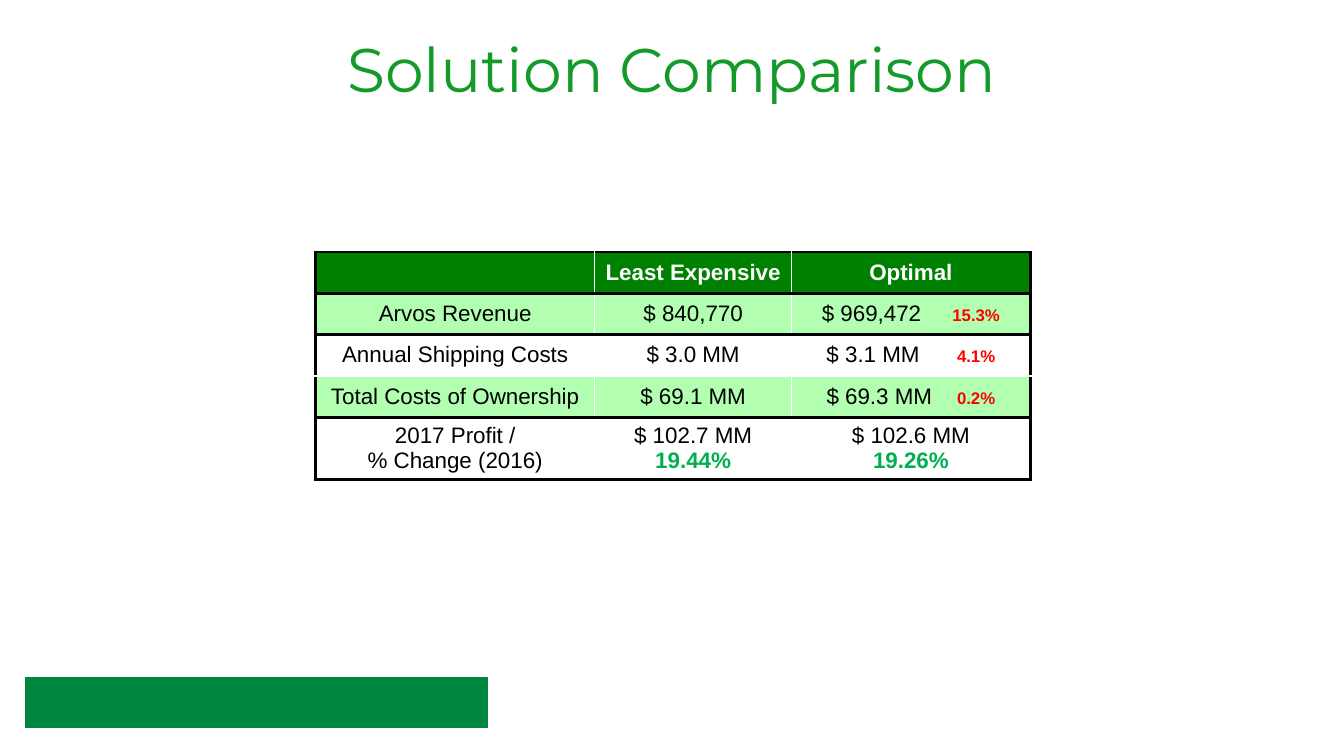
from lxml.etree import SubElement
from pptx import Presentation
from pptx.dml.color import RGBColor
from pptx.enum.shapes import MSO_SHAPE
from pptx.enum.text import MSO_ANCHOR, PP_ALIGN
from pptx.oxml.ns import qn
from pptx.util import Inches, Pt

BLACK, WHITE, RED = "000000", "FFFFFF", "FF0000"
HEADER_GREEN, BAND_GREEN, GAIN_GREEN = "008000", "B2FFB2", "00B050"
BLACK_EDGE, WHITE_EDGE = (BLACK, 2.25), (WHITE, 1)
SPACE_WIDTH = 4.45  # points, Arial 16


def color(hex_string):
    return RGBColor.from_string(hex_string)


def add_run(paragraph, text, size=16, font="Arial", fill=BLACK, bold=False, spacing=0):
    """Append a run; spacing is extra letter spacing in points."""
    run = paragraph.add_run()
    run.text = text
    run.font.size = Pt(size)
    run.font.name = font
    run.font.bold = bold
    run.font.color.rgb = color(fill)
    if spacing:
        run.font._element.set("spc", str(round(spacing * 100)))


def set_borders(cell, edges):
    """Draw the cell edges, given in the order left, right, top, bottom."""
    properties = cell._tc.get_or_add_tcPr()
    for index, (side, (hex_string, width)) in enumerate(zip("LRTB", edges)):
        line = SubElement(properties, qn(f"a:ln{side}"), w=str(Pt(width)))
        solid = SubElement(line, qn("a:solidFill"))
        SubElement(solid, qn("a:srgbClr"), val=hex_string)
        properties.insert(index, line)


class SlideBuilder:
    """Holds the fonts and the current slide."""

    title_font = "Montserrat"

    def __init__(self, slide):
        self.slide = slide

    def title(self, text, left, top, width, height):
        box = self.slide.shapes.add_textbox(*map(Inches, (left, top, width, height)))
        frame = box.text_frame
        frame.word_wrap = True
        frame.vertical_anchor = MSO_ANCHOR.MIDDLE
        paragraph = frame.paragraphs[0]
        paragraph.alignment = PP_ALIGN.CENTER
        add_run(paragraph, text, size=44, font=self.title_font, fill="139A29")

    def bar(self, hex_string, left, top, width, height):
        bar = self.slide.shapes.add_shape(
            MSO_SHAPE.RECTANGLE, *map(Inches, (left, top, width, height)))
        bar.shadow.inherit = False
        bar.fill.solid()
        bar.fill.fore_color.rgb = color(hex_string)
        bar.line.color.rgb = color(hex_string)
        bar.line.width = Pt(0.75)

    def table(self, rows, left, top, widths, heights, fills, rules):
        """Add a table; rules are the horizontal edges from top to bottom."""
        table = self.slide.shapes.add_table(
            len(rows), len(widths), Inches(left), Inches(top),
            Inches(sum(widths)), Inches(sum(heights))).table
        for column, width in zip(table.columns, widths):
            column.width = Inches(width)
        verticals = [BLACK_EDGE] + [WHITE_EDGE] * (len(widths) - 1) + [BLACK_EDGE]
        for r, row in enumerate(rows):
            table.rows[r].height = Inches(heights[r])
            for c, lines in enumerate(row):
                cell = table.cell(r, c)
                cell.fill.solid()
                cell.fill.fore_color.rgb = color(fills[r])
                cell.vertical_anchor = MSO_ANCHOR.MIDDLE
                set_borders(cell, (*verticals[c:c + 2], *rules[r:r + 2]))
                self.fill_cell(cell, lines)

    def fill_cell(self, cell, lines):
        """Write each line, a list of (text, format) runs, as a centred paragraph."""
        frame = cell.text_frame
        for index, runs in enumerate(lines):
            paragraph = frame.add_paragraph() if index else frame.paragraphs[0]
            paragraph.alignment = PP_ALIGN.CENTER
            for text, style in runs:
                add_run(paragraph, text, **style)


def heading(text):
    return [[(text, {"fill": WHITE, "bold": True})]]


def plain(*lines):
    return [[(line, {})] for line in lines]


def with_change(amount, change, gap):
    """Amount and small red change, gap space widths apart."""
    return [[(amount, {}), (" ", {"spacing": (gap - 1) * SPACE_WIDTH}),
             (change, {"size": 12, "fill": RED, "bold": True})]]


def with_growth(amount, growth):
    return [[(amount, {})], [(growth, {"fill": GAIN_GREEN, "bold": True})]]


def main():
    presentation = Presentation()
    presentation.slide_width = Inches(13.33)
    presentation.slide_height = Inches(7.5)
    builder = SlideBuilder(presentation.slides.add_slide(presentation.slide_layouts[6]))

    rows = [
        [[], heading("Least Expensive"), heading("Optimal")],
        [plain("Arvos Revenue"), plain("$ 840,770"),
         with_change("$ 969,472", "15.3%", 5)],
        [plain("Annual Shipping Costs"), plain("$ 3.0 MM"),
         with_change("$ 3.1 MM", "4.1%", 6)],
        [plain("Total Costs of Ownership"), plain("$ 69.1 MM"),
         with_change("$ 69.3 MM", "0.2%", 4)],
        [plain("2017 Profit /", "% Change (2016)"),
         with_growth("$ 102.7 MM", "19.44%"), with_growth("$ 102.6 MM", "19.26%")],
    ]
    builder.table(
        rows, 3.13, 2.5, widths=[2.77, 1.95, 2.37], heights=[0.41] * 4 + [0.62],
        fills=[HEADER_GREEN, BAND_GREEN, WHITE, BAND_GREEN, WHITE],
        rules=[BLACK_EDGE] * 3 + [WHITE_EDGE] + [BLACK_EDGE] * 2)
    builder.title("Solution Comparison", 3.04, 0.25, 7.25, 0.84)
    builder.bar("00853E", 0.25, 6.72, 4.59, 0.5)
    presentation.save("out.pptx")


if __name__ == "__main__":
    main()
